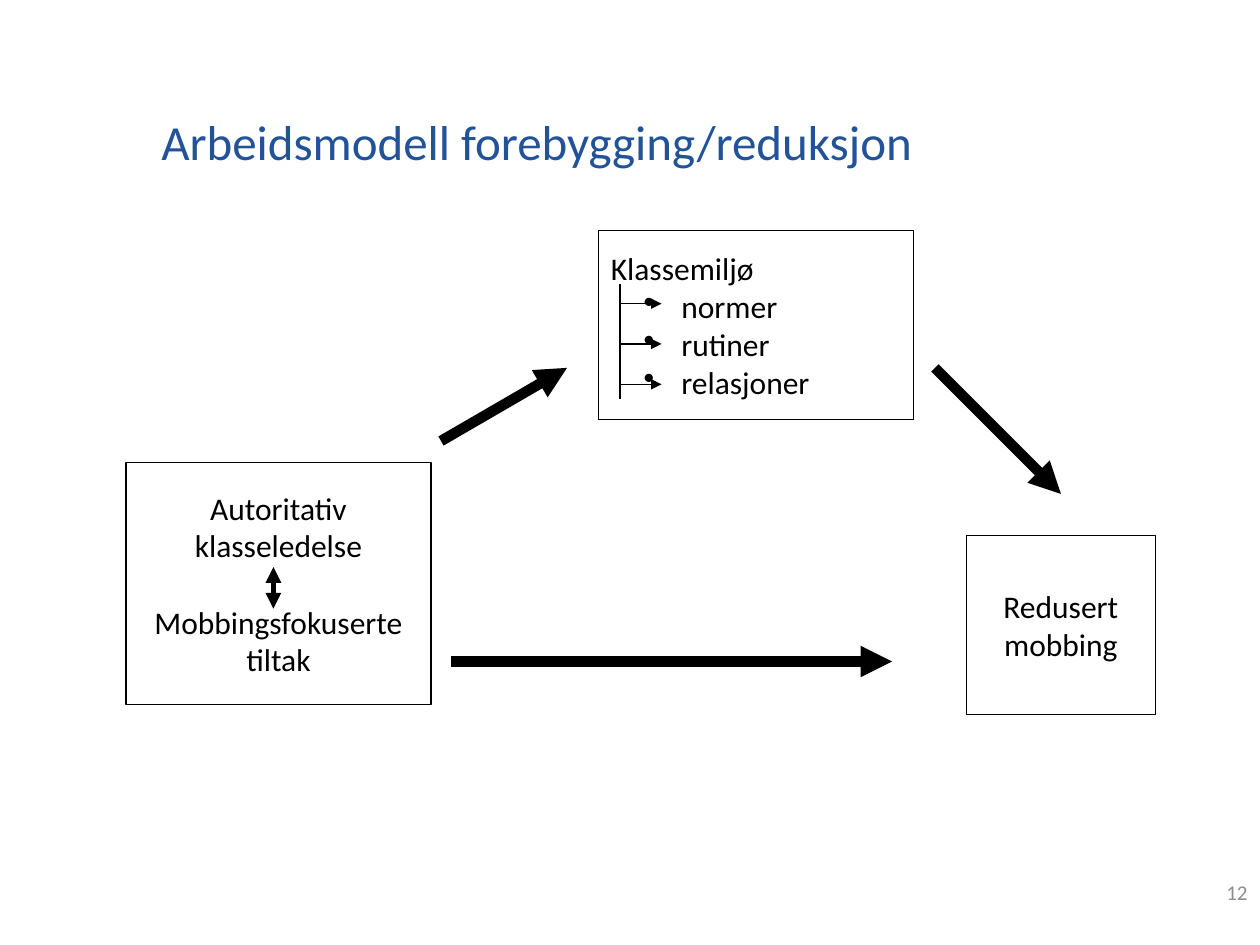
from lxml.etree import SubElement
from pptx import Presentation
from pptx.dml.color import RGBColor
from pptx.enum.shapes import MSO_CONNECTOR as Connector, MSO_SHAPE as Shape
from pptx.enum.text import MSO_ANCHOR as Anchor, PP_ALIGN as Align
from pptx.oxml.ns import qn
from pptx.util import Inches, Pt

BLACK, WHITE, BLUE, GREY = "000000", "FFFFFF", "225298", "8C8C8C"


def color(hex_string):
    """Return the colour for a hex string."""
    return RGBColor.from_string(hex_string)


def style(para, size, hex_string, align=Align.LEFT):
    """Set the font and alignment of a paragraph."""
    para.alignment = align
    para.font.name = "Calibri"
    para.font.size = Pt(size)
    para.font.color.rgb = color(hex_string)


def place(shape, box):
    """Move a shape to a box given in inches."""
    shape.left, shape.top, shape.width, shape.height = map(Inches, box)


def add_bullet(para, margin=0.56, hanging=0.3):
    """Give a paragraph a hanging bullet."""
    props = para._p.get_or_add_pPr()
    props.set("marL", str(Inches(margin)))
    props.set("indent", str(-Inches(hanging)))
    SubElement(props, qn("a:buChar"), char="•")


def add_line(page, start, end, width, heads=()):
    """Draw a black line with triangles at the named ends."""
    points = map(Inches, (*start, *end))
    line = page.shapes.add_connector(Connector.STRAIGHT, *points)
    line.line.color.rgb = color(BLACK)
    line.line.width = Pt(width)
    for head in heads:
        SubElement(line.line._get_or_add_ln(), qn(f"a:{head}"), type="triangle")
    SubElement(line._element.spPr, qn("a:effectLst"))


def add_factor(page, box, texts, align=Align.CENTER):
    """Draw a framed factor and return its paragraphs."""
    frame = page.shapes.add_shape(Shape.RECTANGLE, *map(Inches, box))
    frame.shadow.inherit = False
    frame.fill.solid()
    frame.fill.fore_color.rgb = color(WHITE)
    frame.line.color.rgb = color(BLACK)
    frame.line.width = Pt(0.75)
    text_frame = frame.text_frame
    text_frame.word_wrap = False
    text_frame.vertical_anchor = Anchor.MIDDLE
    text_frame.text = "\n".join(texts)
    for para in text_frame.paragraphs:
        style(para, 18, BLACK, align)
    return text_frame.paragraphs


def add_title(page, box):
    """Fill the title placeholder."""
    title = page.shapes.title
    place(title, box)
    title.text_frame.text = "Arbeidsmodell forebygging/reduksjon"
    title.text_frame.vertical_anchor = Anchor.MIDDLE
    style(title.text_frame.paragraphs[0], 28, BLUE)


def add_page_number(page, box):
    """Write the page number."""
    text_frame = page.shapes.add_textbox(*map(Inches, box)).text_frame
    text_frame.word_wrap = True
    text_frame.vertical_anchor = Anchor.MIDDLE
    text_frame.text = "12"
    style(text_frame.paragraphs[0], 12, GREY, Align.RIGHT)


def add_class_environment(page, box):
    """Draw the class environment with its three branches."""
    texts = ("Klassemiljø", "normer", "rutiner", "relasjoner")
    for para in add_factor(page, box, texts, Align.LEFT)[1:]:
        add_bullet(para)
    left, top = box[0] + 0.17, box[1]
    add_line(page, (left, top + 0.42), (left, top + 1.34), 0.75)
    for index in range(3):
        level = top + 0.58 + 0.32 * index
        add_line(page, (left, level), (left + 0.33, level), 0.75, ["tailEnd"])


def add_leadership(page, box):
    """Draw leadership and measures, joined by a two-way arrow."""
    texts = ("Autoritativ", "klasseledelse", "Mobbingsfokuserte", "tiltak")
    add_factor(page, box, texts)[2].space_before = Pt(22)
    left, top = box[0] + 1.17, box[1]
    ends = ["headEnd", "tailEnd"]
    add_line(page, (left, top + 1.16), (left, top + 0.83), 3, ends)


def main():
    """Build the working model slide."""
    deck = Presentation()
    deck.slide_width, deck.slide_height = Inches(10), Inches(7.5)
    page = deck.slides.add_slide(deck.slide_layouts[5])
    add_title(page, (1.18, 0.83, 8.31, 0.57))
    add_page_number(page, (7.92, 6.83, 2.08, 0.5))
    add_class_environment(page, (4.75, 1.83, 2.5, 1.5))
    add_leadership(page, (1, 3.67, 2.42, 1.92))
    add_factor(page, (7.67, 4.25, 1.5, 1.42), ("Redusert", "mobbing"))
    for start, end in (
        ((3.5, 3.5), (4.5, 2.92)),
        ((3.58, 5.25), (7.08, 5.25)),
        ((7.42, 2.92), (8.42, 3.92)),
    ):
        add_line(page, start, end, 6, ["tailEnd"])
    deck.save("out.pptx")


if __name__ == "__main__":
    main()
